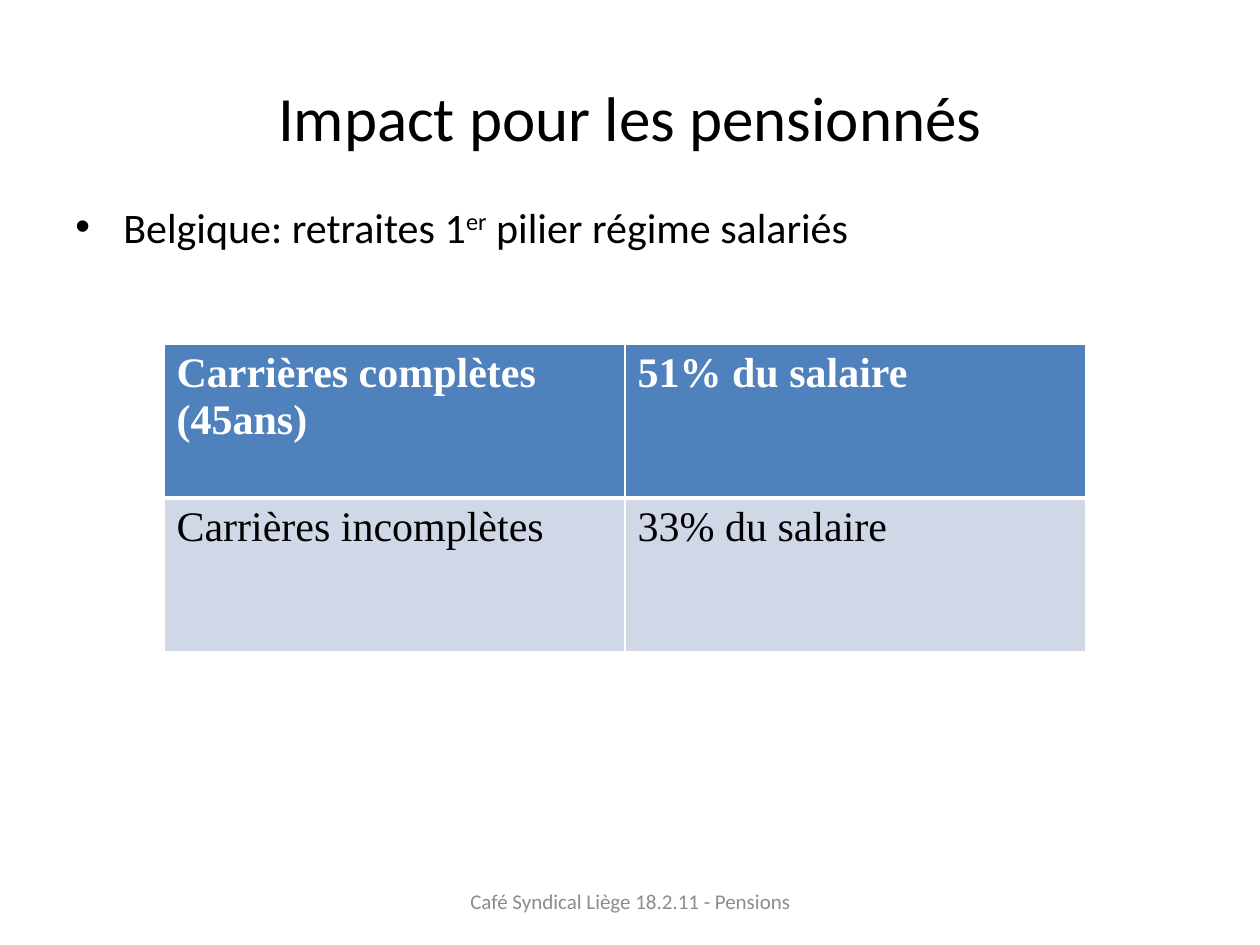
from dataclasses import dataclass

from lxml.etree import SubElement
from pptx import Presentation
from pptx.dml.color import RGBColor
from pptx.enum.text import MSO_ANCHOR, PP_ALIGN
from pptx.oxml import parse_xml
from pptx.oxml.ns import nsdecls, qn
from pptx.slide import Slide
from pptx.table import _Cell
from pptx.text.text import _Paragraph, _Run
from pptx.util import Emu, Pt

PX_PER_INCH = 126
BLACK = RGBColor(0x00, 0x00, 0x00)
WHITE = RGBColor(0xFF, 0xFF, 0xFF)
GREY = RGBColor(0x8C, 0x8C, 0x8C)
BLUE = RGBColor(0x4F, 0x81, 0xBD)
PALE_BLUE = RGBColor(0xD0, 0xD8, 0xE8)


@dataclass(frozen=True)
class TextStyle:
    size: int
    color: RGBColor
    font: str = "Calibri"
    bold: bool = False


@dataclass(frozen=True)
class TextBlock:
    left: int
    top: int
    width: int
    height: int
    pieces: tuple[str, ...]
    style: TextStyle
    align: PP_ALIGN = PP_ALIGN.CENTER
    anchor: MSO_ANCHOR = MSO_ANCHOR.MIDDLE


@dataclass(frozen=True)
class TableRow:
    texts: tuple[str, str]
    style: TextStyle
    fill: RGBColor
    top_border: int
    bottom_border: int


TITLE = TextBlock(63, 38, 1134, 157, ("Impact pour les pensionnés",), TextStyle(36, BLACK))
PENSION_SCHEME = TextBlock(
    63, 195, 1134, 649,
    ("Belgique: retraites 1", "er", " pilier régime salariés"),
    TextStyle(24, BLACK), PP_ALIGN.LEFT, MSO_ANCHOR.TOP,
)
FOOTER = TextBlock(431, 876, 399, 50, ("Café Syndical Liège 18.2.11 - Pensions",), TextStyle(12, GREY))

CAREERS = (
    TableRow(("Carrières complètes (45ans)", "51% du salaire"),
             TextStyle(24, WHITE, "Times New Roman", True), BLUE, 1, 3),
    TableRow(("Carrières incomplètes", "33% du salaire"),
             TextStyle(24, BLACK, "Times New Roman"), PALE_BLUE, 3, 1),
)


def px(length: int) -> Emu:
    return Emu(round(length * 914400 / PX_PER_INCH))


def style_run(run: _Run, style: TextStyle) -> None:
    run.font.name = style.font
    run.font.size = Pt(style.size)
    run.font.bold = style.bold
    run.font.color.rgb = style.color


def add_text(slide: Slide, block: TextBlock) -> _Paragraph:
    box = slide.shapes.add_textbox(px(block.left), px(block.top), px(block.width), px(block.height))
    box.text_frame.word_wrap = True
    box.text_frame.vertical_anchor = block.anchor
    paragraph = box.text_frame.paragraphs[0]
    paragraph.alignment = block.align
    for piece in block.pieces:
        run = paragraph.add_run()
        run.text = piece
        style_run(run, block.style)
    return paragraph


def add_bullet(paragraph: _Paragraph, indent: int) -> None:
    properties = paragraph._p.get_or_add_pPr()
    properties.set("marL", str(px(indent)))
    properties.set("indent", str(-px(indent)))
    spacing = SubElement(properties, qn("a:spcBef"))
    SubElement(spacing, qn("a:spcPct")).set("val", "20000")
    SubElement(properties, qn("a:buFont")).set("typeface", "Arial")
    SubElement(properties, qn("a:buChar")).set("char", "•")


def set_borders(cell: _Cell, row: TableRow) -> None:
    widths = {"lnL": 1, "lnR": 1, "lnT": row.top_border, "lnB": row.bottom_border}
    properties = cell._tc.get_or_add_tcPr()
    for position, (side, width) in enumerate(widths.items()):
        properties.insert(position, parse_xml(
            f'<a:{side} {nsdecls("a")} w="{Pt(width)}"><a:solidFill>'
            f'<a:srgbClr val="{WHITE}"/></a:solidFill></a:{side}>'
        ))


def add_careers(slide: Slide, rows: tuple[TableRow, ...]) -> None:
    table = slide.shapes.add_table(len(rows), 2, px(164), px(344), px(922), px(308)).table
    for row_index, row in enumerate(rows):
        for column_index, text in enumerate(row.texts):
            cell = table.cell(row_index, column_index)
            cell.text_frame.text = text
            style_run(cell.text_frame.paragraphs[0].runs[0], row.style)
            cell.fill.solid()
            cell.fill.fore_color.rgb = row.fill
            set_borders(cell, row)


def main() -> None:
    presentation = Presentation()
    presentation.slide_width = px(1260)
    presentation.slide_height = px(945)
    slide = presentation.slides.add_slide(presentation.slide_layouts[6])
    add_text(slide, TITLE)
    scheme = add_text(slide, PENSION_SCHEME)
    add_bullet(scheme, 48)
    scheme.runs[1].font._element.set("baseline", "30000")
    add_text(slide, FOOTER)
    add_careers(slide, CAREERS)
    presentation.save("out.pptx")


if __name__ == "__main__":
    main()
